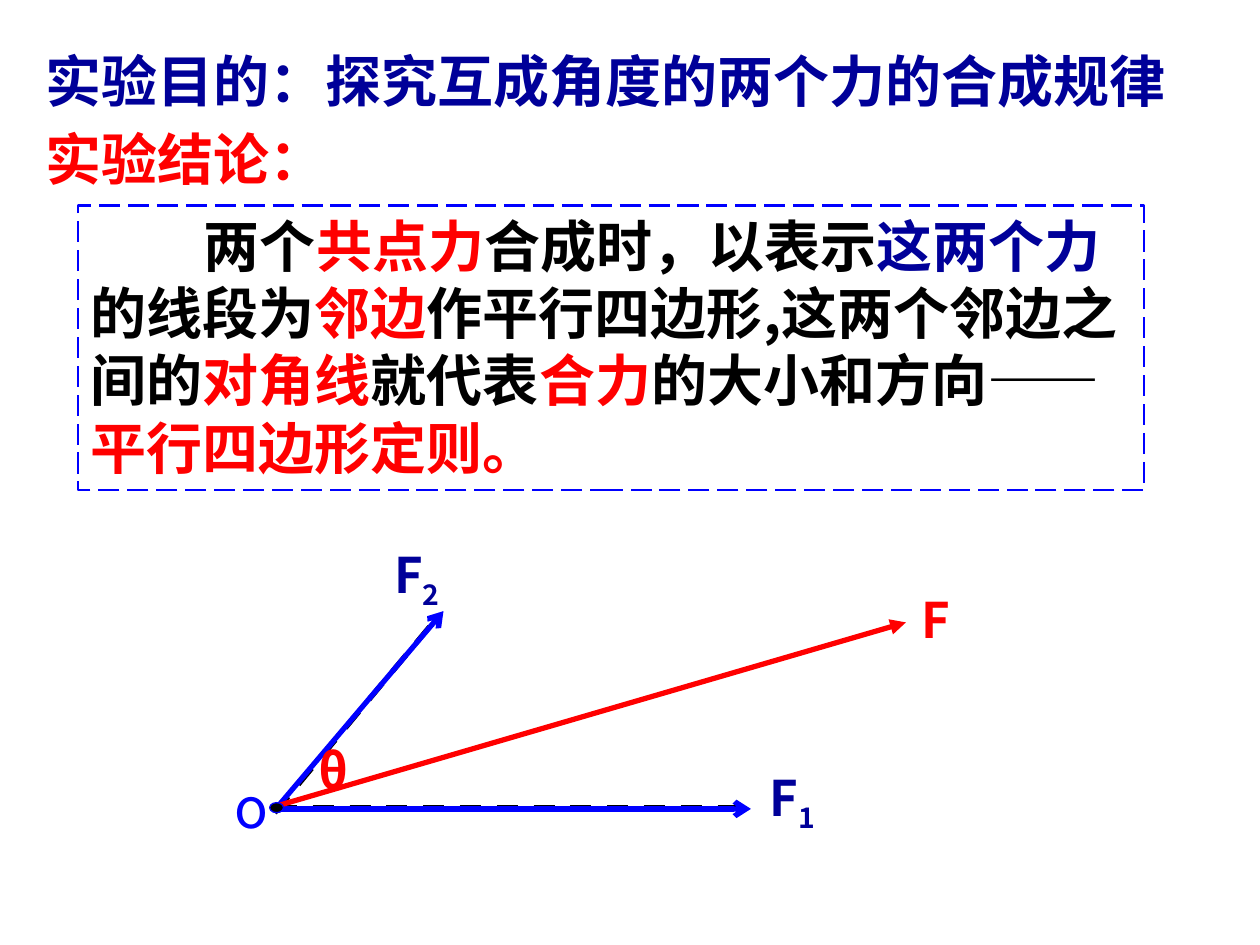
import pptx
import pptx.util
import pptx.dml.color
import pptx.enum.dml
import pptx.enum.shapes
import pptx.enum.text
from lxml import etree
from pptx.oxml.ns import qn
from pptx.util import Inches, Pt

FONT = "Noto Sans CJK SC"
HEX = {"navy": "000099", "blue": "0000FF", "red": "FF0000",
       "black": "000000", "white": "FFFFFF"}

TITLE = "实验目的：探究互成角度的两个力的合成规律"
RULE = [
    ("两个", "black"), ("共点力", "red"), ("合成时，以表示", "black"),
    ("这两个力", "navy"), ("的线段为", "black"), ("邻边", "red"),
    ("作平行四边形,这两个邻边之间的", "black"), ("对角线", "red"),
    ("就代表", "black"), ("合力", "red"), ("的大小和方向——", "black"),
    ("平行四边形定则。", "red"),
]
# start, end, colour, dashed, arrowhead
LINES = [
    ((2.19, 6.41), (5.97, 6.41), "black", True, None),
    ((2.18, 6.45), (3.48, 4.89), "black", True, None),
    ((2.18, 6.42), (5.96, 6.42), "blue", False, "arrow"),
    ((2.18, 6.43), (3.52, 4.85), "blue", False, "arrow"),
    ((2.22, 6.39), (7.19, 4.94), "red", False, "triangle"),
]
# text, subscript, box, size, colour, bold, side inset, top inset
LABELS = [
    ("实验结论：", "", (0.26, 0.94, 3.04, 0.64), 32, "red", True, 0.1, 0.05),
    ("F", "1", (6.01, 6.04, 0.6, 0.57), 28, "navy", True, 0.1, 0.05),
    ("F", "2", (3.03, 4.27, 0.69, 0.57), 28, "navy", True, 0.1, 0.05),
    ("o", "", (1.76, 6.08, 0.55, 0.64), 32, "blue", False, 0.1, 0.05),
    ("F", "", (7.19, 4.62, 0.53, 0.59), 28, "red", True, 0.12, 0.06),
    ("θ", "", (2.41, 5.82, 0.54, 0.59), 28, "red", True, 0.12, 0.06),
]


def rgb(name):
    return pptx.dml.color.RGBColor.from_string(HEX[name])


def place(box):
    return [Inches(n) for n in box]


def style(para, size, bold=True):
    para.alignment = pptx.enum.text.PP_ALIGN.LEFT
    para.font.size, para.font.bold, para.font.name = Pt(size), bold, FONT


def add_run(para, text, color):
    """Add a coloured run whose Chinese glyphs also use FONT."""
    run = para.add_run()
    run.text = text
    run.font.color.rgb = rgb(color)
    run.font.name = FONT
    etree.SubElement(run.font._element, qn("a:ea"), typeface=FONT)
    return run


def add_title(slide):
    title = slide.shapes.title
    title.left, title.top, title.width, title.height = place((0.26, 0.2, 9.48, 0.75))
    frame = title.text_frame
    frame.auto_size = pptx.enum.text.MSO_AUTO_SIZE.NONE
    frame.vertical_anchor = pptx.enum.text.MSO_ANCHOR.BOTTOM
    style(frame.paragraphs[0], 32)
    add_run(frame.paragraphs[0], TITLE, "navy")


def add_shape(slide, kind, box, fill, width):
    shape = slide.shapes.add_shape(kind, *place(box))
    shape.shadow.inherit = False
    shape.fill.solid()
    shape.fill.fore_color.rgb = rgb(fill)
    shape.line.color.rgb = rgb("blue")
    shape.line.width = Pt(width)
    return shape


def add_rule(slide):
    kind = pptx.enum.shapes.MSO_SHAPE.RECTANGLE
    shape = add_shape(slide, kind, (0.62, 1.63, 8.46, 2.26), "white", 1.5)
    shape.line.dash_style = pptx.enum.dml.MSO_LINE.LONG_DASH
    color = shape._element.spPr.find(qn("a:solidFill"))[0]
    etree.SubElement(color, qn("a:alpha"), val="70000")
    frame = shape.text_frame
    frame.word_wrap = True
    frame.vertical_anchor = pptx.enum.text.MSO_ANCHOR.TOP
    para = frame.paragraphs[0]
    style(para, 32)
    para._p.get_or_add_pPr().set("indent", str(Inches(0.9)))
    for text, color in RULE:
        add_run(para, text, color)


def add_line(slide, start, end, color, dashed, head):
    kind = pptx.enum.shapes.MSO_CONNECTOR.STRAIGHT
    line = slide.shapes.add_connector(kind, *place(start + end))
    line.line.color.rgb = rgb(color)
    line.line.width = Pt(3)
    if dashed:
        line.line.dash_style = pptx.enum.dml.MSO_LINE.DASH
    if head:
        etree.SubElement(line.line._get_or_add_ln(), qn("a:tailEnd"), type=head)
    etree.SubElement(line._element.spPr, qn("a:effectLst"))


def add_label(slide, text, sub, box, size, color, bold, side, top):
    frame = slide.shapes.add_textbox(*place(box)).text_frame
    frame.word_wrap = True
    frame.margin_left = frame.margin_right = Inches(side)
    frame.margin_top = frame.margin_bottom = Inches(top)
    para = frame.paragraphs[0]
    style(para, size, bold)
    add_run(para, text, color)
    if sub:
        add_run(para, sub, color).font._element.set("baseline", "-25000")


def main():
    deck = pptx.Presentation()
    deck.slide_width, deck.slide_height = Inches(10), Inches(7.5)
    slide = deck.slides.add_slide(deck.slide_layouts[5])
    add_title(slide)
    add_rule(slide)
    for line in LINES:
        add_line(slide, *line)
    dot = pptx.enum.shapes.MSO_SHAPE.OVAL
    add_shape(slide, dot, (2.14, 6.37, 0.11, 0.08), "black", 0.75)
    for label in LABELS:
        add_label(slide, *label)
    deck.save("out.pptx")


if __name__ == "__main__":
    main()
